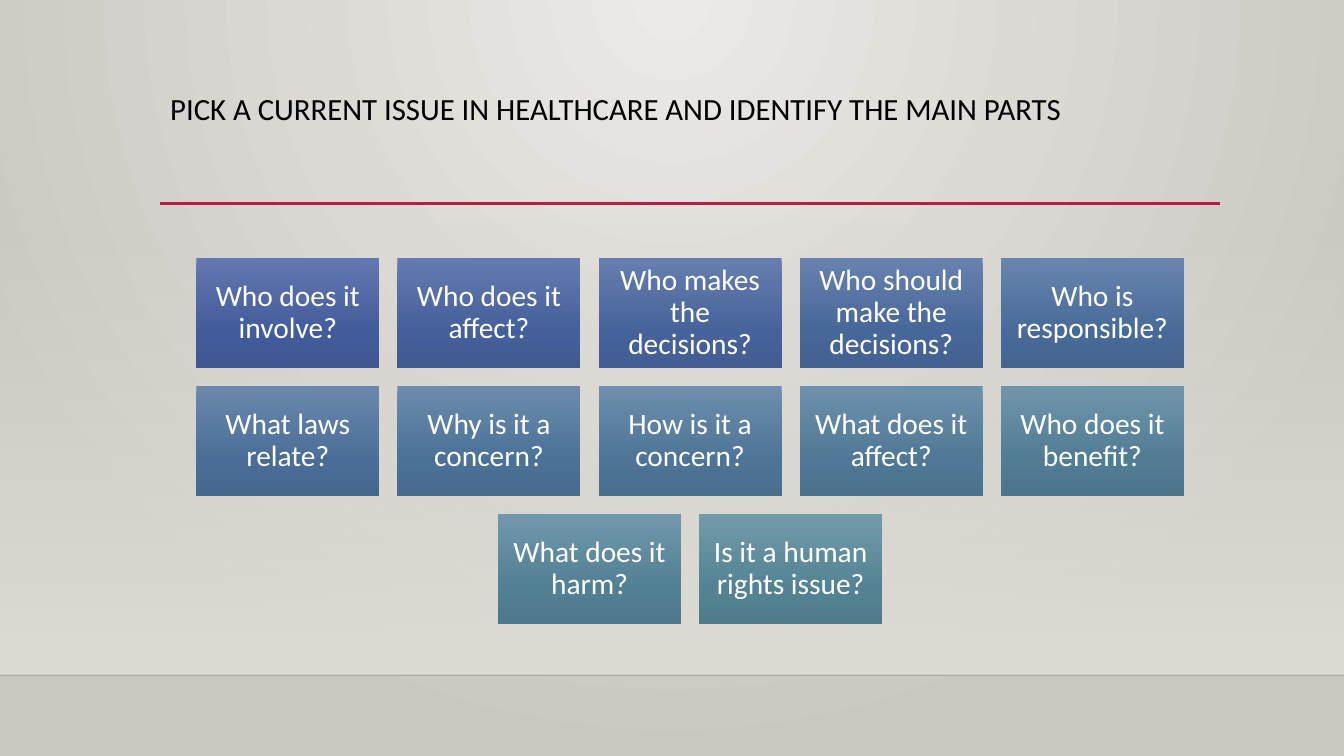
from lxml import etree
from pptx import Presentation, util as u
from pptx.dml.color import RGBColor
from pptx.enum import shapes, text
from pptx.oxml import ns

# Content
TITLE = "PICK A CURRENT ISSUE IN HEALTHCARE AND IDENTIFY THE MAIN PARTS"
QUESTION_ROWS = [
    ["Who does it involve?", "Who does it affect?", "Who makes the decisions?",
     "Who should make the decisions?", "Who is responsible?"],
    ["What laws relate?", "Why is it a concern?", "How is it a concern?",
     "What does it affect?", "Who does it benefit?"],
    ["What does it harm?", "Is it a human rights issue?"],
]

# Look: gradient stops as (position %, colour, opacity %)
FONT = "Calibri"
BACKDROP = [(0, "ECEAE7", 100), (100, "CAC7C1", 100)]
FLOOR = [(0, "DFDBD5", 0), (100, "DFDBD5", 100)]
CARD_POSITIONS = (0, 69, 100)
FIRST_CARD = ("6378B0", "425B9B", "3F5793")
LAST_CARD = ("729BA9", "538393", "4F7C8B")

# Grid, in inches
WIDTH, HEIGHT = 13.33, 7.5
FLOOR_TOP, FLOOR_BOTTOM = 2.21, 6.7
RULE_LEFT, RULE_RIGHT, RULE_TOP = 1.59, 12.1, 2.02
CARD_WIDTH, CARD_HEIGHT, GAP = 1.815, 1.09, 0.18
CENTRE, GRID_TOP = (RULE_LEFT + RULE_RIGHT) / 2, 2.56


def color(value):
    return RGBColor.from_string(value)


def add_child(parent, tag, **attributes):
    child = etree.SubElement(parent, ns.qn(tag))
    for name, value in attributes.items():
        child.set(name, str(value))
    return child


def set_gradient(fill, properties, stops, radial=False):
    """Swap a solid fill for a gradient, downward or spreading from the top centre."""
    fill.solid()
    solid = properties.find(ns.qn("a:solidFill"))
    gradient = etree.Element(ns.qn("a:gradFill"), rotWithShape="1")
    stop_list = add_child(gradient, "a:gsLst")
    for position, value, opacity in stops:
        stop = add_child(stop_list, "a:gs", pos=position * 1000)
        stop_color = add_child(stop, "a:srgbClr", val=value)
        if opacity < 100:
            add_child(stop_color, "a:alpha", val=opacity * 1000)
    if radial:
        circle = add_child(gradient, "a:path", path="circle")
        add_child(circle, "a:fillToRect", l=43000, t=0, r=43000, b=100000)
    else:
        add_child(gradient, "a:lin", ang=5400000, scaled=0)
    properties.replace(solid, gradient)


def add_panel(left, top, width, height, stops):
    panel = slide.shapes.add_shape(shapes.MSO_SHAPE.RECTANGLE, u.Inches(left),
                                   u.Inches(top), u.Inches(width), u.Inches(height))
    panel.shadow.inherit = False
    panel.line.fill.background()
    set_gradient(panel.fill, panel._element.spPr, stops)
    return panel


def add_rule(left, right, top, value, points, opacity=100):
    rule = slide.shapes.add_connector(shapes.MSO_CONNECTOR.STRAIGHT, u.Inches(left),
                                      u.Inches(top), u.Inches(right), u.Inches(top))
    rule.line.color.rgb = color(value)
    rule.line.width = u.Pt(points)
    if opacity < 100:
        rule_color = rule.line._ln.find(".//" + ns.qn("a:srgbClr"))
        add_child(rule_color, "a:alpha", val=opacity * 1000)
    add_child(rule._element.spPr, "a:effectLst")


def write(shape, words, size, value, align, anchor, inset):
    frame = shape.text_frame
    frame.word_wrap = True
    frame.vertical_anchor = anchor
    frame.margin_left = frame.margin_right = u.Inches(inset)
    paragraph = frame.paragraphs[0]
    paragraph.text = words
    paragraph.alignment = align
    paragraph.line_spacing = 0.9
    paragraph.font.name = FONT
    paragraph.font.size = u.Pt(size)
    paragraph.font.color.rgb = color(value)


def blend(start, end, share):
    pairs = zip(color(start), color(end))
    return "".join(f"{round(a + (b - a) * share):02X}" for a, b in pairs)


presentation = Presentation()
presentation.slide_width = u.Inches(WIDTH)
presentation.slide_height = u.Inches(HEIGHT)
slide = presentation.slides.add_slide(presentation.slide_layouts[6])

# Backdrop and floor
background_fill = slide.background.fill
background_fill.solid()
set_gradient(background_fill, slide._element.cSld.bg.bgPr, BACKDROP, radial=True)
add_panel(0, FLOOR_TOP, WIDTH, FLOOR_BOTTOM - FLOOR_TOP, FLOOR)
add_rule(0, WIDTH, FLOOR_BOTTOM, "000001", 1, opacity=20)

# Title and its rule
add_rule(RULE_LEFT, RULE_RIGHT, RULE_TOP, "B71E42", 2.5)
title = slide.shapes.add_textbox(u.Inches(RULE_LEFT), u.Inches(0.88),
                                 u.Inches(10.5), u.Inches(1.15))
write(title, TITLE, 22, "000000", text.PP_ALIGN.LEFT, text.MSO_ANCHOR.TOP, 0.1)

# Question cards: each row centred, colours running from first to last
last = sum(len(row) for row in QUESTION_ROWS) - 1
number = 0
for row_index, row in enumerate(QUESTION_ROWS):
    row_width = len(row) * (CARD_WIDTH + GAP) - GAP
    top = GRID_TOP + row_index * (CARD_HEIGHT + GAP)
    for column, question in enumerate(row):
        left = CENTRE - row_width / 2 + column * (CARD_WIDTH + GAP)
        stops = [(position, blend(start, end, number / last), 100)
                 for position, start, end in zip(CARD_POSITIONS, FIRST_CARD, LAST_CARD)]
        card = add_panel(left, top, CARD_WIDTH, CARD_HEIGHT, stops)
        write(card, question, 21, "FFFFFF", text.PP_ALIGN.CENTER,
              text.MSO_ANCHOR.MIDDLE, 0.09)
        number += 1

presentation.save("out.pptx")
